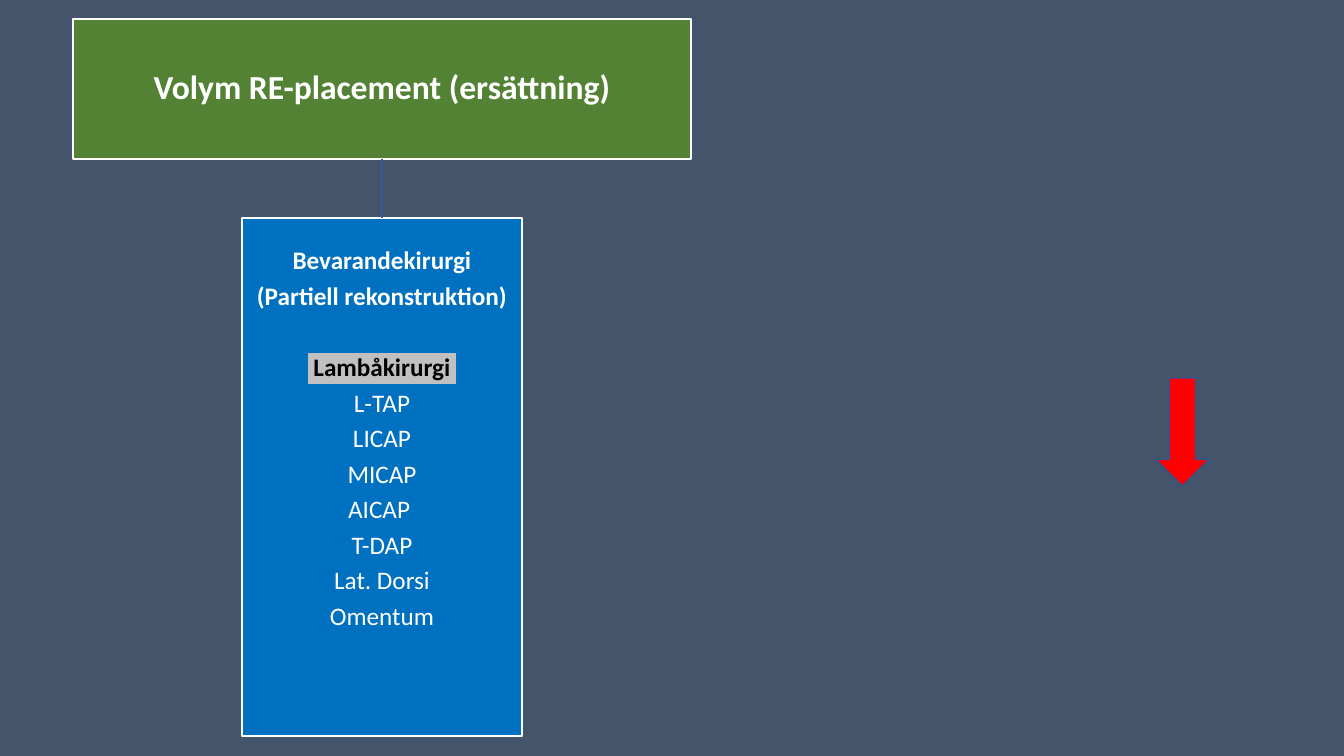
from lxml.etree import SubElement
from pptx import Presentation
from pptx.dml.color import RGBColor
from pptx.enum.shapes import MSO_CONNECTOR as Link, MSO_SHAPE as Kind
from pptx.enum.text import MSO_ANCHOR as Anchor, PP_ALIGN as Align
from pptx.oxml import parse_xml
from pptx.oxml.ns import nsdecls, qn
from pptx.util import Emu, Pt

WIDE, HIGH = 1344, 756
SCALE = 12192000 / WIDE
FLAPS = ["L-TAP", "LICAP", "MICAP", "AICAP ", "T-DAP", "Lat. Dorsi", "Omentum"]


def px(n):
    return Emu(round(n * SCALE))


def rgb(code):
    return RGBColor.from_string(code)


class Board:
    font = "Calibri"
    white = "FFFFFF"

    def __init__(self, deck, back):
        self.slide = deck.slides.add_slide(deck.slide_layouts[6])
        fill = self.slide.background.fill
        fill.solid()
        fill.fore_color.rgb = rgb(back)

    def shape(self, kind, x, y, w, h, fill, line=white):
        item = self.slide.shapes.add_shape(kind, px(x), px(y), px(w), px(h))
        item.shadow.inherit = False
        item.fill.solid()
        item.fill.fore_color.rgb = rgb(fill)
        item.line.color.rgb = rgb(line)
        item.line.width = Pt(1)
        return item

    def frame(self, item, anchor, top=0, side=2):
        frame = item.text_frame
        frame.word_wrap = True
        frame.vertical_anchor = anchor
        frame.margin_left = frame.margin_right = px(side)
        frame.margin_top, frame.margin_bottom = px(top), 0
        return frame

    def text(self, frame, words, size=18, bold=False, color=white,
             mark=None, after=5.9):
        """Add a centred paragraph; mark is a highlight colour."""
        para = frame.paragraphs[0]
        if para.runs:
            para = frame.add_paragraph()
        para.alignment = Align.CENTER
        para.line_spacing = 0.9
        para.space_after = Pt(after)
        run = para.add_run()
        run.text = words
        font = run.font
        font.size, font.bold, font.name = Pt(size), bold, self.font
        font.color.rgb = rgb(color)
        if mark:
            glow = parse_xml(f'<a:highlight {nsdecls("a")}>'
                             f'<a:srgbClr val="{mark}"/></a:highlight>')
            run._r.rPr.find(qn("a:solidFill")).addnext(glow)

    def link(self, start, end, color):
        """Join the bottom of start to the top of end."""
        line = self.slide.shapes.add_connector(Link.STRAIGHT, 0, 0, 0, 0)
        line.begin_connect(start, 2)
        line.end_connect(end, 0)
        line.line.color.rgb = rgb(color)
        line.line.width = Pt(1)
        SubElement(line._element.spPr, qn("a:effectLst"))


def main():
    deck = Presentation()
    deck.slide_width, deck.slide_height = px(WIDE), px(HIGH)
    board = Board(deck, "44546A")

    title = board.shape(Kind.RECTANGLE, 73, 19, 618, 140, "548235")
    board.text(board.frame(title, Anchor.MIDDLE),
               "Volym RE-placement (ersättning)", size=24, bold=True, after=0)

    panel = board.shape(Kind.RECTANGLE, 242, 218, 280, 518, "0070C0")
    frame = board.frame(panel, Anchor.TOP, top=30, side=1)
    board.text(frame, "Bevarandekirurgi", bold=True)
    board.text(frame, "(Partiell rekonstruktion)", bold=True, after=31.6)
    board.text(frame, " Lambåkirurgi ", bold=True, color="000000", mark="C0C0C0")
    for flap in FLAPS:
        board.text(frame, flap)

    board.link(title, panel, "365B9D")
    board.shape(Kind.DOWN_ARROW, 1156, 378, 53, 108, "FF0000", line="325491")
    deck.save("out.pptx")


if __name__ == "__main__":
    main()
